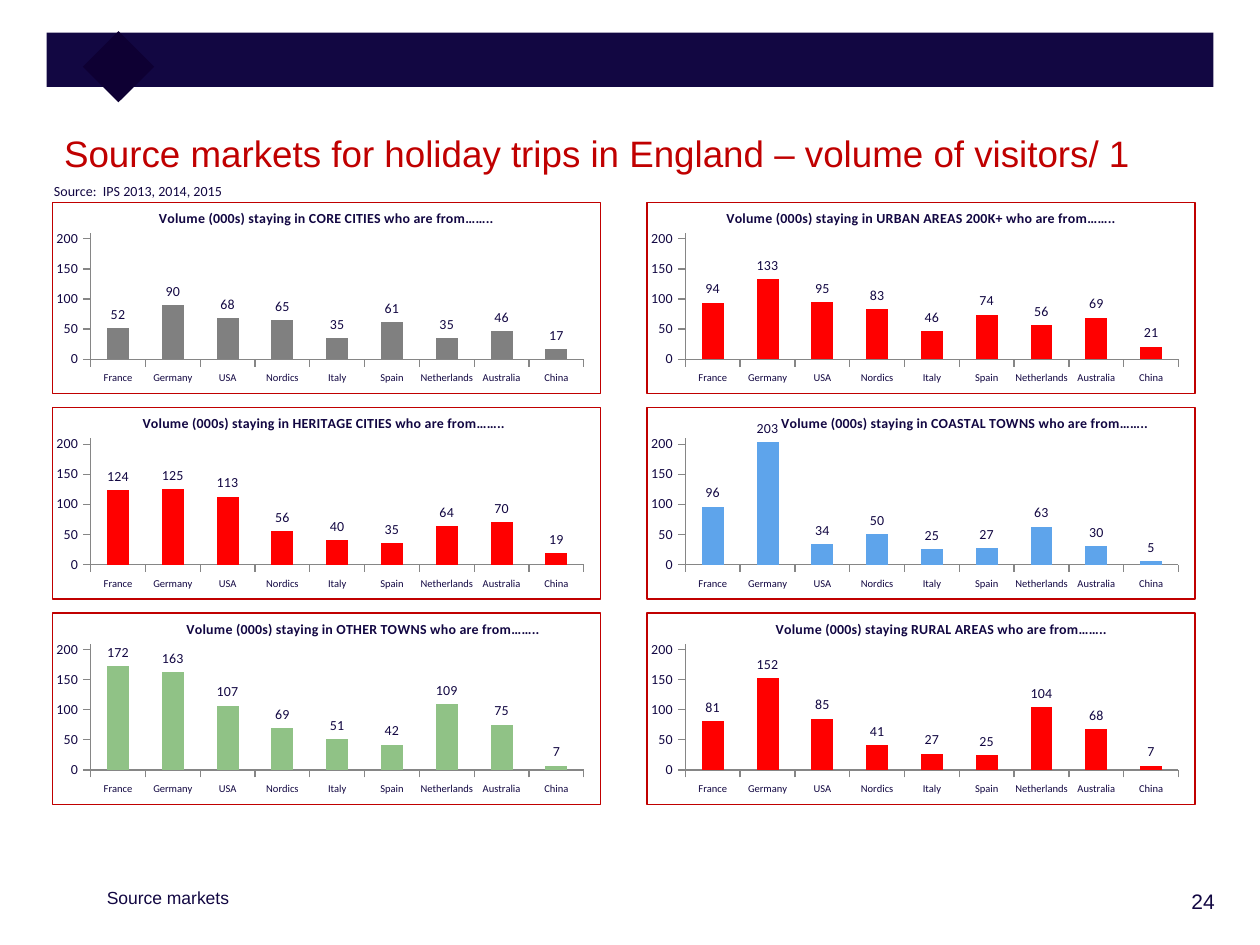
from pptx import Presentation
from pptx.chart.data import CategoryChartData
from pptx.dml.color import RGBColor
from pptx.enum.chart import XL_CHART_TYPE as ChartType, XL_LABEL_POSITION as LabelPos, XL_TICK_MARK as Tick
from pptx.enum.shapes import MSO_SHAPE as Shape
from pptx.enum.text import PP_ALIGN as Align
from pptx.oxml import parse_xml
from pptx.oxml.ns import nsdecls, qn
from pptx.util import Inches, Pt

NAVY = RGBColor(0x12, 0x07, 0x42)
DARK = RGBColor(0x0E, 0x00, 0x33)
CRIMSON = RGBColor(0xC0, 0x00, 0x00)
AXIS_GRAY = RGBColor(0x86, 0x86, 0x86)
GRAY = RGBColor(0x80, 0x80, 0x80)
RED = RGBColor(0xFF, 0x00, 0x00)
BLUE = RGBColor(0x5E, 0xA4, 0xEB)
GREEN = RGBColor(0x90, 0xC2, 0x86)

MARKETS = ["France", "Germany", "USA", "Nordics", "Italy", "Spain", "Netherlands", "Australia", "China"]
CHARTS = [
    ("staying in CORE CITIES", GRAY, 0.19, [52, 90, 68, 65, 35, 61, 35, 46, 17]),
    ("staying in URBAN AREAS 200K+", RED, 0.14, [94, 133, 95, 83, 46, 74, 56, 69, 21]),
    ("staying in HERITAGE CITIES", RED, 0.16, [124, 125, 113, 56, 40, 35, 64, 70, 19]),
    ("staying in COASTAL TOWNS", BLUE, 0.24, [96, 203, 34, 50, 25, 27, 63, 30, 5]),
    ("staying in OTHER TOWNS", GREEN, 0.24, [172, 163, 107, 69, 51, 42, 109, 75, 7]),
    ("staying RURAL AREAS", RED, 0.23, [81, 152, 85, 41, 27, 25, 104, 68, 7]),
]


def add_block(slide, left, top, width, height, color, rotation=0):
    """Add a plain filled rectangle."""
    sp = slide.shapes.add_shape(Shape.RECTANGLE, Inches(left), Inches(top), Inches(width), Inches(height))
    sp.shadow.inherit = False
    sp.fill.solid()
    sp.fill.fore_color.rgb = color
    sp.line.fill.background()
    sp.rotation = rotation


def add_text(slide, text, left, top, width, height, size, font="Arial", color=NAVY,
             align=Align.LEFT, margin_top=0.05):
    """Add a one-line text box."""
    box = slide.shapes.add_textbox(Inches(left), Inches(top), Inches(width), Inches(height))
    tf = box.text_frame
    tf.word_wrap = True
    tf.margin_top = Inches(margin_top)
    p = tf.paragraphs[0]
    p.text = text
    p.alignment = align
    p.font.size = Pt(size)
    p.font.name = font
    p.font.color.rgb = color


def set_layout(parent, index, **values):
    """Give a chart part a manual layout."""
    for old in parent.findall(qn("c:layout")):
        parent.remove(old)
    items = "".join(f'<c:{tag} val="{value}"/>' for tag, value in values.items())
    parent.insert(index, parse_xml(
        f'<c:layout {nsdecls("c")}><c:manualLayout>{items}</c:manualLayout></c:layout>'))


def add_border(chart):
    """Outline the chart area."""
    chart.element.find(qn("c:chart")).addnext(parse_xml(
        f'<c:spPr {nsdecls("c", "a")}><a:noFill/><a:ln w="{Pt(0.75)}"><a:solidFill>'
        f'<a:srgbClr val="{CRIMSON}"/></a:solidFill></a:ln></c:spPr>'))


def style_font(font, size, bold=False):
    """Set the chart's text style."""
    font.size = Pt(size)
    font.name = "Calibri"
    font.bold = bold
    font.color.rgb = NAVY


def add_title(chart, text, left):
    """Add a chart title that overlays the plot."""
    tf = chart.chart_title.text_frame
    tf.text = text
    style_font(tf.paragraphs[0].font, 8, True)
    title = chart.chart_title.element
    set_layout(title, 1, xMode="edge", yMode="edge", x=left, y=0.02)
    title.find(qn("c:overlay")).set("val", "1")


def style_axis(axis, size):
    """Set ticks, line and label size of an axis."""
    axis.has_major_gridlines = False
    axis.major_tick_mark = Tick.OUTSIDE
    axis.minor_tick_mark = Tick.NONE
    axis.format.line.color.rgb = AXIS_GRAY
    style_font(axis.tick_labels.font, size)


def add_column_chart(slide, left, top, group, color, title_left, values):
    """Add one bordered column chart of visitor volumes."""
    data = CategoryChartData(number_format="0")
    data.categories = MARKETS
    data.add_series("Series 1", values)
    chart = slide.shapes.add_chart(ChartType.COLUMN_CLUSTERED, Inches(left), Inches(top),
                                   Inches(4.36), Inches(1.53), data).chart
    style_font(chart.font, 12)
    chart.has_legend = False
    add_title(chart, f"Volume (000s) {group} who are from……..", title_left)
    style_axis(chart.category_axis, 6)
    axis = chart.value_axis
    style_axis(axis, 8)
    axis.minimum_scale, axis.maximum_scale, axis.major_unit = 0, 210, 50
    axis.tick_labels.number_format = "0"
    axis.tick_labels.number_format_is_linked = False
    plot = chart.plots[0]
    plot.gap_width = 150
    plot.vary_by_categories = False
    fill = plot.series[0].format.fill
    fill.solid()
    fill.fore_color.rgb = color
    plot.has_data_labels = True
    labels = plot.data_labels
    labels.show_value = True
    labels.number_format = "0"
    labels.number_format_is_linked = False
    labels.position = LabelPos.OUTSIDE_END
    style_font(labels.font, 8)
    plot_area = chart.element.find(qn("c:chart")).find(qn("c:plotArea"))
    set_layout(plot_area, 0, layoutTarget="inner", xMode="edge", yMode="edge",
               x=0.07, y=0.16, w=0.9, h=0.66)
    add_border(chart)


def main():
    """Build the slide and save it."""
    prs = Presentation()
    prs.slide_width, prs.slide_height = Inches(10), Inches(7.5)
    slide = prs.slides.add_slide(prs.slide_layouts[6])
    add_text(slide, "24", 8.53, 7, 1.21, 0.36, 12, align=Align.RIGHT)
    add_block(slide, 0.37, 0.26, 9.26, 0.43, NAVY)
    add_block(slide, 0.74, 0.33, 0.4, 0.4, DARK, 45)
    add_text(slide, "Source markets for holiday trips in England – volume of visitors/ 1",
             0.41, 0.95, 9.59, 0.61, 21, color=CRIMSON, margin_top=0.09)
    add_text(slide, "Source:  IPS 2013, 2014, 2015", 0.33, 1.4, 1.59, 0.18, 8, "Calibri")
    add_text(slide, "Source markets", 0.75, 6.99, 2.67, 0.3, 10)
    for i, chart in enumerate(CHARTS):
        row, col = divmod(i, 2)
        add_column_chart(slide, 0.41 + 4.72 * col, 1.6 + 1.63 * row, *chart)
    prs.save("out.pptx")


if __name__ == "__main__":
    main()
